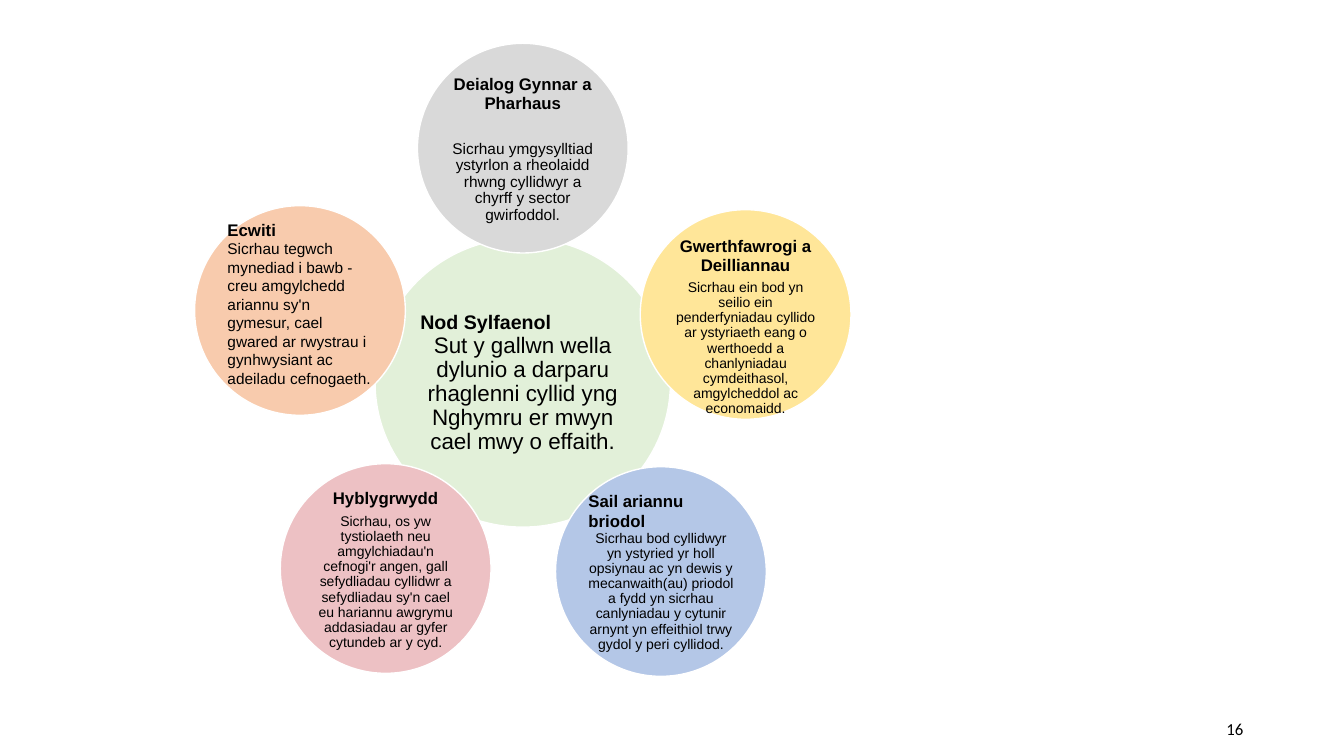
import pptx
import pptx.util
import pptx.dml.color
import pptx.enum.shapes
import pptx.enum.text
from pptx.util import Inches, Pt
from pptx.dml.color import RGBColor

BLACK = RGBColor(0x00, 0x00, 0x00)
WHITE = RGBColor(0xFF, 0xFF, 0xFF)
GREEN = RGBColor(0xE2, 0xF0, 0xD9)
GREY = RGBColor(0xD9, 0xD9, 0xD9)
YELLOW = RGBColor(0xFF, 0xE6, 0x99)
BLUE = RGBColor(0xB4, 0xC7, 0xE7)
PINK = RGBColor(0xED, 0xC1, 0xC4)
ORANGE = RGBColor(0xF8, 0xCB, 0xAD)
LEFT = pptx.enum.text.PP_ALIGN.LEFT
CENTER = pptx.enum.text.PP_ALIGN.CENTER
RIGHT = pptx.enum.text.PP_ALIGN.RIGHT
MIDDLE = pptx.enum.text.MSO_ANCHOR.MIDDLE
HUB = (2.93, 2.87)
PETAL = (2.09, 2.08)
INSET = 0.02


def add_text(tf, text, size, align, bold=False, font="Arial"):
    p = tf.paragraphs[0]
    if p.runs:
        p = tf.add_paragraph()
    p.alignment = align
    p.line_spacing = 0.9 if align == CENTER else 1.0
    r = p.add_run()
    r.text = text
    r.font.name = font
    r.font.size = Pt(size)
    r.font.bold = bold
    r.font.color.rgb = BLACK
    return p


prs = pptx.Presentation()
prs.slide_width = Inches(13.33)
prs.slide_height = Inches(7.5)
s = prs.slides.add_slide(prs.slide_layouts[6])

# Circles: left, top, size, fill, text shift down,
# heading (text, size, alignment), gap, body (text, size, alignment)
circles = [
    (3.72, 2.36, HUB, GREEN, 0,
     ("Nod Sylfaenol", 14, LEFT), 0,
     ("Sut y gallwn wella dylunio a darparu rhaglenni cyllid yng Nghymru "
      "er mwyn cael mwy o effaith.", 16, CENTER)),
    (4.14, 0.43, PETAL, GREY, 0.02,
     ("Deialog Gynnar a Pharhaus", 12, CENTER), 20,
     ("Sicrhau ymgysylltiad ystyrlon a rheolaidd rhwng cyllidwyr a chyrff "
      "y sector gwirfoddol.", 11, CENTER)),
    (6.35, 2.08, PETAL, YELLOW, 0.13,
     ("Gwerthfawrogi a Deilliannau", 12, CENTER), 4,
     ("Sicrhau ein bod yn seilio ein penderfyniadau cyllido ar ystyriaeth "
      "eang o werthoedd a chanlyniadau cymdeithasol, amgylcheddol ac "
      "economaidd.", 10, CENTER)),
    (5.51, 4.63, PETAL, BLUE, 0,
     ("Sail ariannu briodol", 12, LEFT), 0,
     ("Sicrhau bod cyllidwyr yn ystyried yr holl opsiynau ac yn dewis y "
      "mecanwaith(au) priodol a fydd yn sicrhau canlyniadau y cytunir arnynt "
      "yn effeithiol trwy gydol y peri cyllidod.", 10, CENTER)),
    (2.78, 4.6, PETAL, PINK, 0.02,
     ("Hyblygrwydd", 12, CENTER), 4,
     ("Sicrhau, os yw tystiolaeth neu amgylchiadau'n cefnogi'r angen, gall "
      "sefydliadau cyllidwr a sefydliadau sy'n cael eu hariannu awgrymu "
      "addasiadau ar gyfer cytundeb ar y cyd.", 10, CENTER)),
    (1.93, 2.04, PETAL, ORANGE, -0.07,
     ("Ecwiti", 12, LEFT), 0,
     ("Sicrhau tegwch mynediad i bawb - creu amgylchedd ariannu sy'n gymesur, "
      "cael gwared ar rwystrau i gynhwysiant ac adeiladu cefnogaeth.",
      11, LEFT)),
]
for left, top, (width, height), fill, shift, heading, gap, body in circles:
    sp = s.shapes.add_shape(pptx.enum.shapes.MSO_SHAPE.OVAL, Inches(left),
                            Inches(top), Inches(width), Inches(height))
    sp.shadow.inherit = False
    sp.fill.solid()
    sp.fill.fore_color.rgb = fill
    sp.line.color.rgb = WHITE
    sp.line.width = Pt(1)
    tf = sp.text_frame
    tf.word_wrap = True
    tf.vertical_anchor = MIDDLE
    tf.margin_left = tf.margin_right = Inches(INSET)
    tf.margin_top = Inches(INSET + max(2 * shift, 0))
    tf.margin_bottom = Inches(INSET + max(-2 * shift, 0))
    p = add_text(tf, *heading, bold=True)
    p.space_after = Pt(gap)
    add_text(tf, *body)

# Slide number
sp = s.shapes.add_textbox(Inches(9.43), Inches(7.03), Inches(3), Inches(0.4))
tf = sp.text_frame
tf.word_wrap = True
tf.vertical_anchor = MIDDLE
add_text(tf, "16", 12, RIGHT, font="Calibri")

prs.save("out.pptx")
